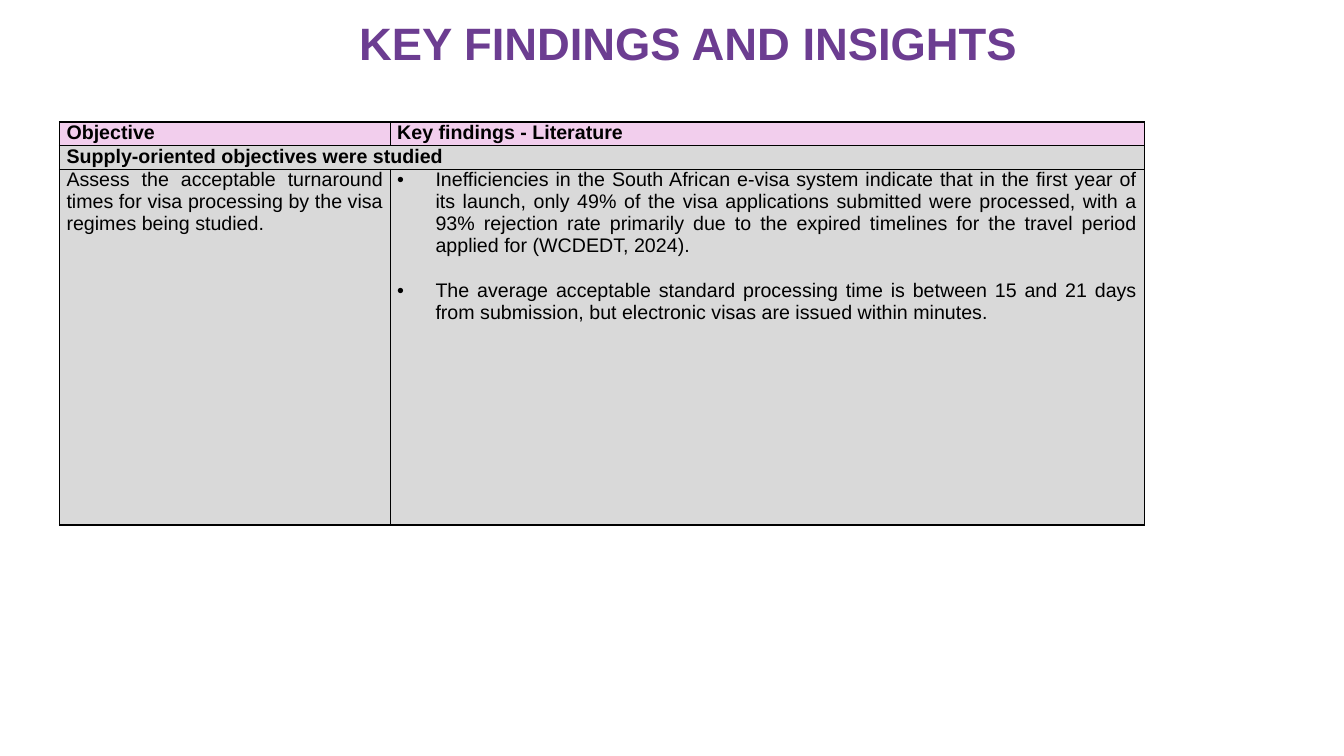
from pptx import Presentation
from pptx.dml.color import RGBColor
from pptx.enum import text
from pptx.oxml import parse_xml
from pptx.oxml.ns import nsdecls
from pptx.util import Inches, Pt

TITLE = "KEY FINDINGS AND INSIGHTS"
HEADINGS = ["Objective", "Key findings - Literature"]
SECTION = "Supply-oriented objectives were studied"
OBJECTIVE = ("Assess the acceptable turnaround times for visa processing "
             "by the visa regimes being studied.")
FINDINGS = [
    "Inefficiencies in the South African e-visa system indicate that in the "
    "first year of its launch, only 49% of the visa applications submitted "
    "were processed, with a 93% rejection rate primarily due to the expired "
    "timelines for the travel period applied for (WCDEDT, 2024).",
    "The average acceptable standard processing time is between 15 and 21 "
    "days from submission, but electronic visas are issued within minutes.",
]

PURPLE, PINK, GREY, BLACK = "6C3D91", "F2CEED", "D9D9D9", "000000"
COLUMN_WIDTHS = [3.28, 7.48]
ROW_HEIGHTS = [0.21, 0.21, 3.53]
INDENT = Inches(0.38)
FINDING_GAP = Pt(16)

# Each cell: row, column, paragraphs, fill, bold, bulleted
CELLS = [
    (0, 0, HEADINGS[:1], PINK, True, False),
    (0, 1, HEADINGS[1:], PINK, True, False),
    (1, 0, [SECTION], GREY, True, False),
    (1, 1, [], GREY, True, False),
    (2, 0, [OBJECTIVE], GREY, False, False),
    (2, 1, FINDINGS, GREY, False, True),
]


def color(value):
    return RGBColor.from_string(value)


def set_all(target, values):
    for name, value in values.items():
        setattr(target, name, value)


def write(para, words, size, fill, bold):
    span = para.add_run()
    span.text = words
    set_all(span.font, {"name": "Arial", "size": Pt(size), "bold": bold})
    span.font.color.rgb = color(fill)


def add_bullet(para):
    props = para._p.get_or_add_pPr()
    props.set("marL", str(INDENT))
    props.set("indent", str(-INDENT))
    props.append(parse_xml(f'<a:buFont {nsdecls("a")} typeface="Arial"/>'))
    props.append(parse_xml(f'<a:buChar {nsdecls("a")} char="•"/>'))


def add_borders(cell):
    props = cell._tc.get_or_add_tcPr()
    for side in "LRTB":
        props.append(parse_xml(
            f'<a:ln{side} {nsdecls("a")} w="{Pt(1)}"><a:solidFill>'
            f'<a:srgbClr val="{BLACK}"/></a:solidFill></a:ln{side}>'))


def add_title(page):
    box = page.shapes.add_textbox(
        Inches(1.69), Inches(0.19), Inches(10.27), Inches(0.53))
    set_all(box.text_frame, {
        "word_wrap": True, "vertical_anchor": text.MSO_ANCHOR.MIDDLE})
    para = box.text_frame.paragraphs[0]
    set_all(para, {"alignment": text.PP_ALIGN.CENTER, "line_spacing": 0.9})
    write(para, TITLE, 32.4, PURPLE, True)


def fill_cell(cell, paragraphs, fill, bold, bulleted):
    add_borders(cell)
    cell.fill.solid()
    cell.fill.fore_color.rgb = color(fill)
    set_all(cell, {"margin_left": Inches(0.07), "margin_right": Inches(0.07),
                   "margin_top": 0, "margin_bottom": 0})
    for number, words in enumerate(paragraphs):
        frame = cell.text_frame
        para = frame.add_paragraph() if number else frame.paragraphs[0]
        para.alignment = text.PP_ALIGN.JUSTIFY
        if number:
            para.space_before = FINDING_GAP
        if bulleted:
            add_bullet(para)
        write(para, words, 14, BLACK, bold)


def add_findings_table(page):
    table = page.shapes.add_table(
        len(ROW_HEIGHTS), len(COLUMN_WIDTHS), Inches(0.59), Inches(1.21),
        Inches(sum(COLUMN_WIDTHS)), Inches(sum(ROW_HEIGHTS))).table
    set_all(table, {"first_row": False, "horz_banding": False})
    for column, width in zip(table.columns, COLUMN_WIDTHS):
        column.width = Inches(width)
    for row, height in zip(table.rows, ROW_HEIGHTS):
        row.height = Inches(height)
    table.cell(1, 0).merge(table.cell(1, 1))
    for row, column, *content in CELLS:
        fill_cell(table.cell(row, column), *content)


def main():
    deck = Presentation()
    set_all(deck, {"slide_width": Inches(13.33), "slide_height": Inches(7.5)})
    page = deck.slides.add_slide(deck.slide_layouts[6])
    add_title(page)
    add_findings_table(page)
    deck.save("out.pptx")


if __name__ == "__main__":
    main()
